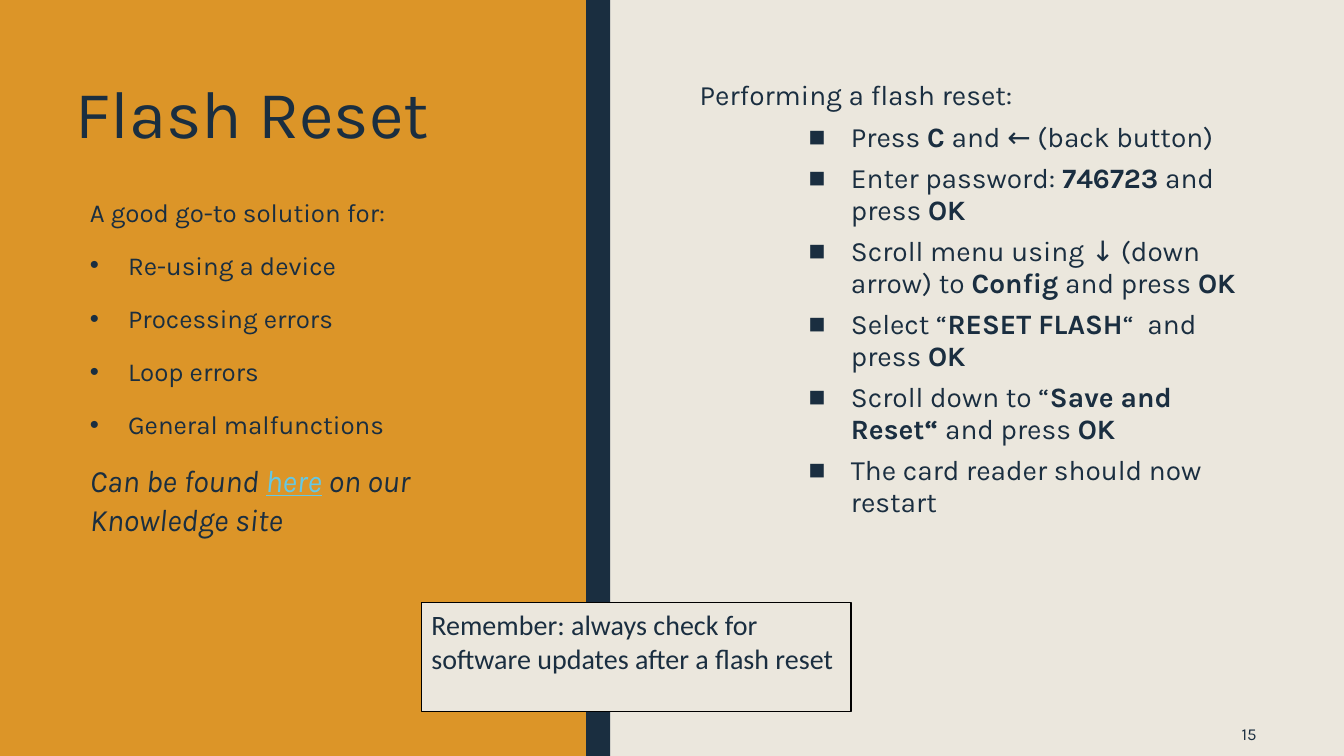
from lxml import etree
from pptx import Presentation
from pptx.dml.color import RGBColor
from pptx.enum.shapes import MSO_SHAPE
from pptx.enum.text import MSO_ANCHOR, MSO_AUTO_SIZE, PP_ALIGN
from pptx.oxml.ns import qn
from pptx.util import Inches, Pt

RECT = MSO_SHAPE.RECTANGLE
LEFT, RIGHT = PP_ALIGN.LEFT, PP_ALIGN.RIGHT
TOP, MIDDLE = MSO_ANCHOR.TOP, MSO_ANCHOR.MIDDLE
FIXED = MSO_AUTO_SIZE.NONE
NAVY = RGBColor(0x1A, 0x2E, 0x40)
AMBER = RGBColor(0xDC, 0x95, 0x28)
CREAM = RGBColor(0xEB, 0xE7, 0xDD)
SKY = RGBColor(0x66, 0xC8, 0xE3)
BLACK = RGBColor(0, 0, 0)

STEPS = [
    "Performing a flash reset:",
    "Press *C* and ← (back button)",
    "Enter password: *746723* and press *OK*",
    "Scroll menu using ↓ (down arrow) to *Config* and press *OK*",
    "Select “*RESET FLASH*“ \u00a0and press *OK*",
    "Scroll down to “*Save and Reset“* and press *OK*",
    "The card reader should now restart",
]
USES = [
    "A good go-to solution for:",
    "Re-using a device",
    "Processing errors",
    "Loop errors",
    "General malfunctions",
    "Can be found *here* on our Knowledge site",
]

deck = Presentation()
deck.slide_width, deck.slide_height = Inches(13.33), Inches(7.5)
slide = deck.slides.add_slide(deck.slide_layouts[3])
slide.background.fill.solid()
slide.background.fill.fore_color.rgb = CREAM
shapes = slide.shapes


def share(x, y, w, h):
    wide, high = deck.slide_width / 100, deck.slide_height / 100
    return int(x * wide), int(y * high), int(w * wide), int(h * high)


def style(para, size, bullet=None, inset=0, hang=0, face="Karla"):
    props = para._p.get_or_add_pPr()
    props.set("marL", str(Inches(inset)))
    props.set("indent", str(-Inches(hang)))
    if bullet:
        etree.SubElement(props, qn("a:buFont")).set("typeface", "Arial")
        etree.SubElement(props, qn("a:buChar")).set("char", bullet)
    else:
        etree.SubElement(props, qn("a:buNone"))
    para.alignment = LEFT
    para.font.size = Pt(size)
    para.font.name = face
    para.font.color.rgb = NAVY


title, steps, uses = shapes.placeholders
for holder, area, anchor in [
    (title, (4.88, 10, 32.71, 11.2), MIDDLE),
    (steps, (51.31, 10, 42.76, 61.73), TOP),
    (uses, (5.93, 25.2, 31.66, 51.73), TOP),
]:
    holder.left, holder.top, holder.width, holder.height = share(*area)
    holder.text_frame.auto_size = FIXED
    holder.text_frame.vertical_anchor = anchor

title.text_frame.text = "Flash Reset"
head = title.text_frame.paragraphs[0]
style(head, 48)
head.line_spacing = 0.84

for holder, lines in [(steps, STEPS), (uses, USES)]:
    frame = holder.text_frame
    for row, line in enumerate(lines):
        para = frame.paragraphs[0] if row == 0 else frame.add_paragraph()
        last = holder is uses and row == len(lines) - 1
        if holder is steps:
            if row:
                para.level = 2
                style(para, 20, "■", 1.5, 0.42)
            else:
                style(para, 20)
            para.line_spacing = 0.94
            para.space_before = Pt(5 if row else 10)
            para.space_after = Pt(2)
        else:
            if row and not last:
                style(para, 18.5, "•", 0.38, 0.38)
            else:
                style(para, 22.2 if last else 18.5)
            para.line_spacing = 1.03
            para.space_before = Pt(0)
            para.space_after = Pt(15)
        if last:
            para.font.italic = True
        for part, text in enumerate(line.split("*")):
            if not text:
                continue
            run = para.add_run()
            run.text = text
            if part % 2 and last:
                run.font.color.rgb = SKY
                run.font.underline = True
            elif part % 2:
                run.font.bold = True

for spot, (area, color) in enumerate([
    ((43.51, 0, 1.88, 100), NAVY),
    ((0, 0, 43.59, 100), AMBER),
]):
    panel = shapes.add_shape(RECT, *share(*area))
    panel.shadow.inherit = False
    panel.fill.solid()
    panel.fill.fore_color.rgb = color
    panel.line.fill.background()
    shapes._spTree.insert(2 + spot, panel._element)

page = shapes.add_textbox(*share(81.1, 94.13, 13.13, 5.87)).text_frame
page.word_wrap = True
page.vertical_anchor = MIDDLE
page.text = "15"
style(page.paragraphs[0], 12)
page.paragraphs[0].alignment = RIGHT

note = shapes.add_shape(RECT, *share(31.36, 79.73, 31.96, 14.4))
note.shadow.inherit = False
note.fill.solid()
note.fill.fore_color.rgb = CREAM
note.line.color.rgb = BLACK
note.line.width = Pt(0.75)
note.text_frame.word_wrap = True
note.text_frame.vertical_anchor = TOP
note.text_frame.text = "Remember: always check for software updates after a flash reset"
style(note.text_frame.paragraphs[0], 20, face="Calibri")

deck.save("out.pptx")
